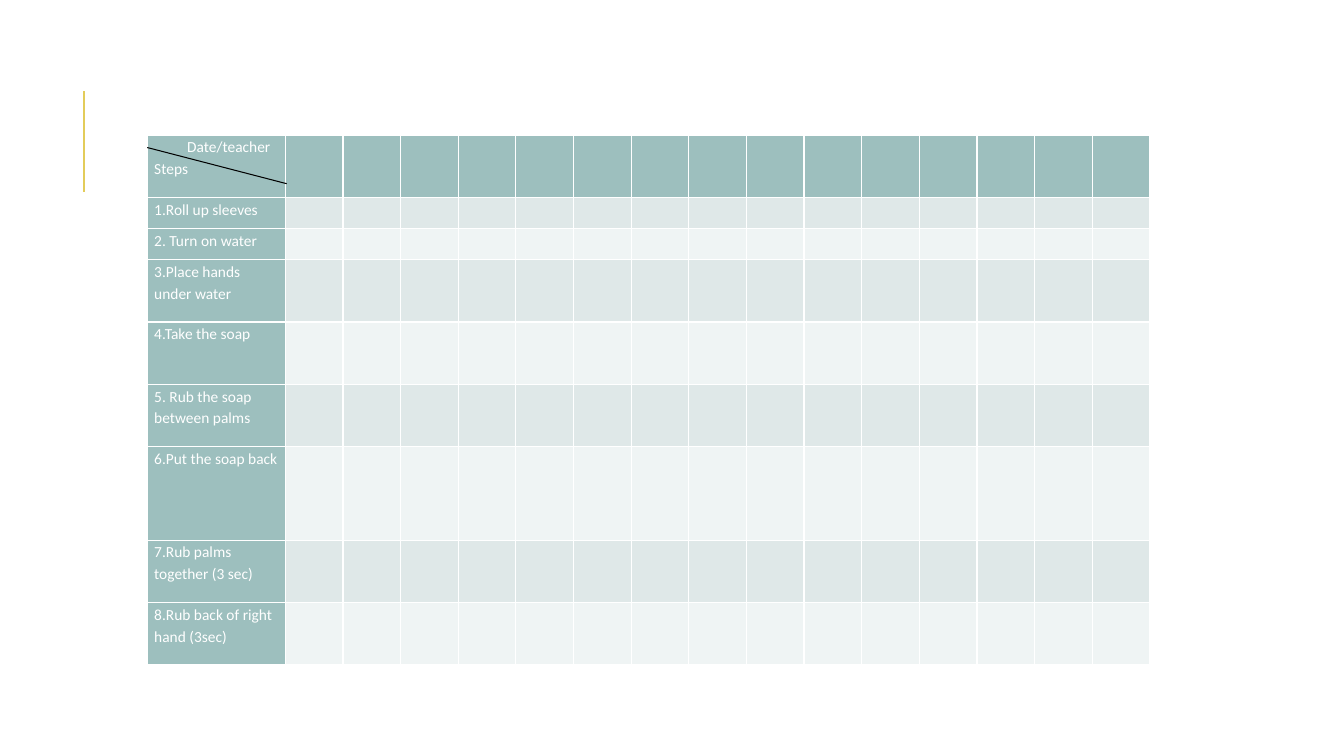
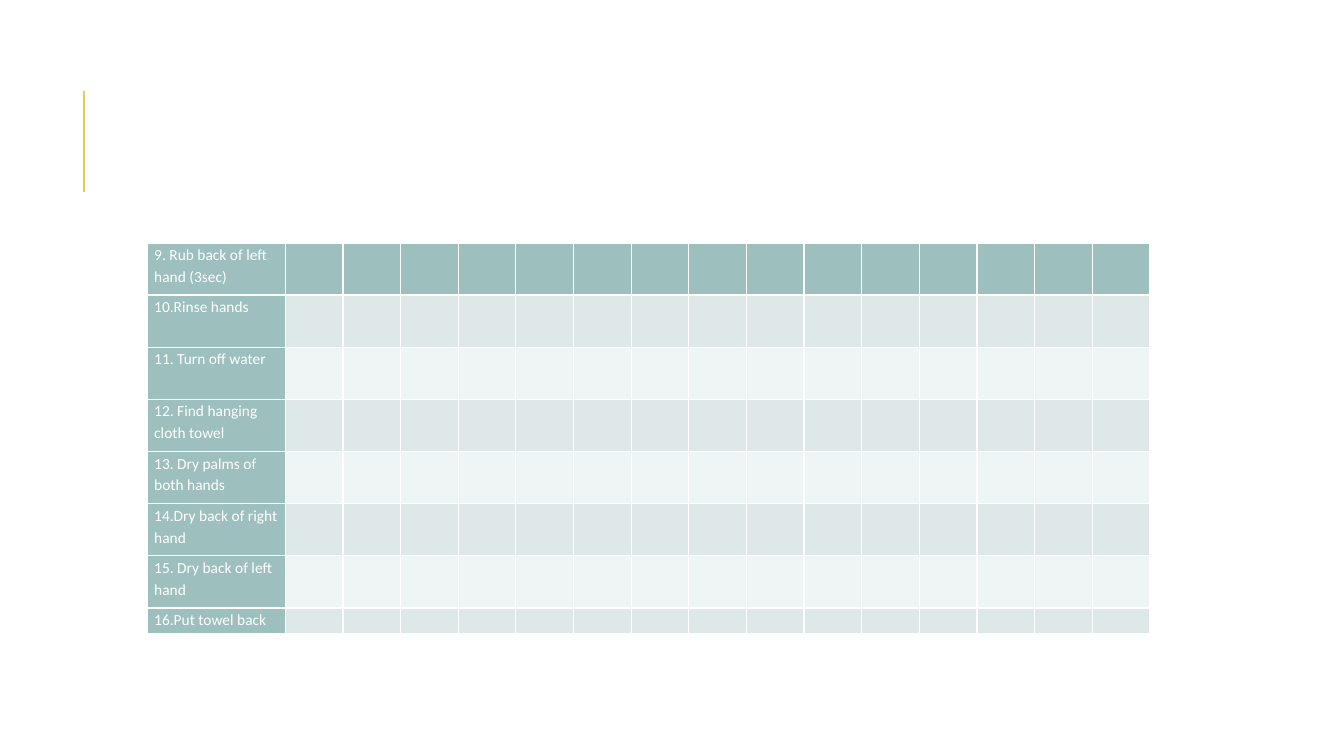
from lxml import etree
from pptx import Presentation
from pptx import util as u
from pptx.dml.color import RGBColor
from pptx.enum import shapes, text
from pptx.oxml.ns import qn

# Shared look
FONT, SIZE, SPACING = "Calibri", u.Pt(11), 1.15
WHITE = RGBColor(0xFF, 0xFF, 0xFF)
BLACK = RGBColor(0x00, 0x00, 0x00)
GOLD = RGBColor(0xE3, 0xCC, 0x5A)
TEAL = RGBColor(0x9D, 0xBF, 0xBE)
BANDS = (RGBColor(0xEF, 0xF4, 0xF4), RGBColor(0xDF, 0xE8, 0xE8))

W, H = u.Inches(13.33), u.Inches(7.5)
TABLE_X, TABLE_W = u.Inches(1.46), u.Inches(9.95)
STEP_W = u.Inches(1.37)
DATES = 15

# Each row: step label, height in row units
STEPS_1 = [
    ("", 2),
    ("1.Roll up sleeves", 1),
    ("2. Turn on water", 1),
    ("3.Place hands under water", 2),
    ("4.Take the soap", 2),
    ("5. Rub the soap between palms", 2),
    ("6.Put the soap back", 3),
    ("7.Rub palms together (3 sec)", 2),
    ("8.Rub back of right hand (3sec)", 2),
]
STEPS_2 = [
    ("9. Rub back of left hand (3sec)", 2),
    ("10.Rinse hands", 2),
    ("11. Turn off water", 2),
    ("12. Find hanging cloth towel", 2),
    ("13. Dry palms of both hands", 2),
    ("14.Dry back of right hand", 2),
    ("15. Dry back of left hand", 2),
    ("16.Put towel back", 1),
]


def add_line(s, x1, y1, x2, y2, color, width):
    ln = s.shapes.add_connector(shapes.MSO_CONNECTOR.STRAIGHT, x1, y1, x2, y2)
    ln.line.color.rgb = color
    ln.line.width = u.Pt(width)
    etree.SubElement(ln._element.spPr, qn("a:effectLst"))


def add_slide(prs):
    """Blank slide with the gold title rule."""
    s = prs.slides.add_slide(prs.slide_layouts[6])
    add_line(s, u.Inches(0.83), u.Inches(1.9), u.Inches(0.83), u.Inches(0.9), GOLD, 1.5)
    return s


def write(p, words):
    p.line_spacing = SPACING
    r = p.add_run()
    r.text = words
    r.font.name, r.font.size, r.font.color.rgb = FONT, SIZE, WHITE


def style_cell(cell, fill):
    cell.margin_left = cell.margin_right = u.Inches(0.07)
    cell.margin_top = cell.margin_bottom = 0
    # Borders go before the fill in a:tcPr
    tc_pr = cell._tc.get_or_add_tcPr()
    for side in ("a:lnL", "a:lnR", "a:lnT", "a:lnB"):
        ln = etree.SubElement(tc_pr, qn(side), w=str(u.Pt(1)))
        solid = etree.SubElement(ln, qn("a:solidFill"))
        etree.SubElement(solid, qn("a:srgbClr"), val=str(WHITE))
    cell.fill.solid()
    cell.fill.fore_color.rgb = fill


def add_checklist(s, steps, y, h):
    """Steps down the side, one blank column per date."""
    frame = s.shapes.add_table(len(steps), DATES + 1, TABLE_X, y, TABLE_W, h)
    tbl = frame.table
    tbl.first_row = tbl.horz_banding = False
    for i, col in enumerate(tbl.columns):
        col.width = (TABLE_W - STEP_W) // DATES if i else STEP_W
    unit = h // sum(units for _, units in steps)
    for i, (label, units) in enumerate(steps):
        tbl.rows[i].height = unit * units
        for j in range(DATES + 1):
            cell = tbl.cell(i, j)
            style_cell(cell, BANDS[i % 2] if i and j else TEAL)
            p = cell.text_frame.paragraphs[0]
            if j == 0 and label:
                write(p, label)
            else:
                # Keep empty cells from stretching the row
                p._p.get_or_add_endParaRPr().set("sz", str(int(SIZE.pt * 100)))
    return tbl


def add_corner(s, tbl, y):
    """Header corner: two labels split by a diagonal line."""
    tf = tbl.cell(0, 0).text_frame
    p = tf.paragraphs[0]
    p.alignment = text.PP_ALIGN.CENTER
    p._p.get_or_add_pPr().set("marL", str(u.Inches(0.25)))
    write(p, "Date/teacher")
    write(tf.add_paragraph(), "Steps")
    row_h = tbl.rows[0].height
    add_line(s, TABLE_X, y + int(row_h * 0.2),
             TABLE_X + int(STEP_W * 1.01), y + int(row_h * 0.78), BLACK, 0.75)


def main():
    prs = Presentation()
    prs.slide_width, prs.slide_height = W, H

    # Steps 1 to 8, with the header row
    s = add_slide(prs)
    y = u.Inches(1.34)
    add_corner(s, add_checklist(s, STEPS_1, y, u.Inches(5.26)), y)

    # Steps 9 to 16
    add_checklist(add_slide(prs), STEPS_2, u.Inches(2.41), u.Inches(3.88))

    prs.save("out.pptx")


if __name__ == "__main__":
    main()
